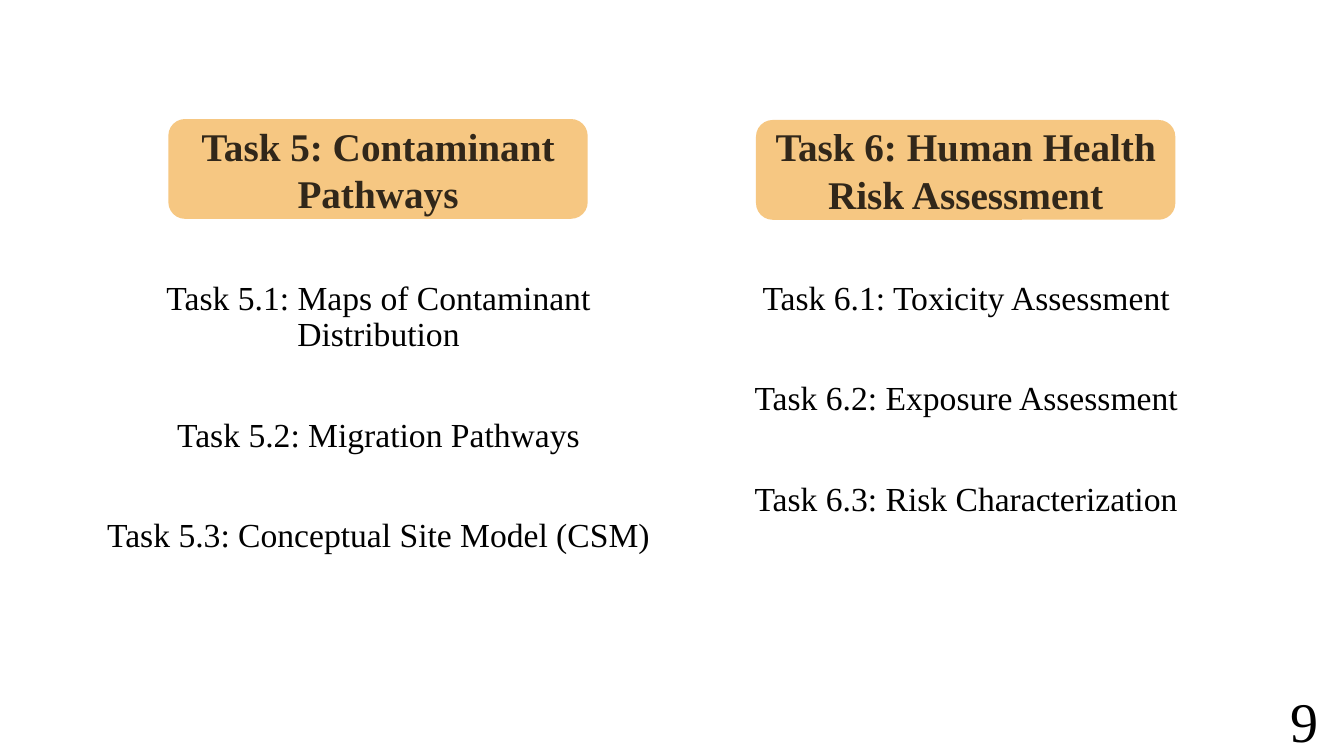
from dataclasses import dataclass

from lxml.etree import SubElement
from pptx import Presentation
from pptx.dml.color import RGBColor
from pptx.enum.shapes import MSO_SHAPE as Shape
from pptx.enum.text import MSO_ANCHOR as Anchor, PP_ALIGN as Align
from pptx.oxml.ns import qn
from pptx.util import Pt


@dataclass(frozen=True)
class Theme:
    """Colours, font and type sizes of the slide."""
    font: str = "Times New Roman"
    ink: RGBColor = RGBColor(0, 0, 0)
    banner: RGBColor = RGBColor(0xF6, 0xC7, 0x82)
    heading_size: int = 28
    task_size: int = 24
    number_size: int = 40


THEME = Theme()
TASK_GROUPS = [
    ("Task 5: Contaminant Pathways", 85, 216.72, [
        "Task 5.1: Maps of Contaminant Distribution",
        "Task 5.2: Migration Pathways",
        "Task 5.3: Conceptual Site Model (CSM)",
    ]),
    ("Task 6: Human Health Risk Assessment", 85.68, 185.76, [
        "Task 6.1: Toxicity Assessment",
        "Task 6.2: Exposure Assessment",
        "Task 6.3: Risk Characterization",
    ]),
]


def write_text(frame, lines, *, size, align=Align.CENTER, anchor=Anchor.TOP,
               bold=False, spacing=1.0, gap=0, opacity=None):
    """Fill a text frame with one formatted paragraph per line."""
    frame.word_wrap = True
    frame.vertical_anchor = anchor
    for index, line in enumerate(lines):
        paragraph = frame.add_paragraph() if index else frame.paragraphs[0]
        paragraph.alignment = align
        paragraph.line_spacing = spacing
        paragraph.space_before = Pt(gap if index else 0)
        run = paragraph.add_run()
        run.text = line
        run.font.name = THEME.font
        run.font.size = Pt(size)
        run.font.bold = bold
        run.font.color.rgb = THEME.ink
        if opacity is not None:
            colour = run.font.fill._xPr.find(".//" + qn("a:srgbClr"))
            SubElement(colour, qn("a:alpha"), val=str(opacity * 1000))


def add_banner(slide, heading, left, top, width, height):
    """Draw the rounded heading of a task group."""
    banner = slide.shapes.add_shape(Shape.ROUNDED_RECTANGLE, Pt(left), Pt(top),
                                    Pt(width), Pt(height))
    banner.shadow.inherit = False
    banner.fill.solid()
    banner.fill.fore_color.rgb = THEME.banner
    banner.line.fill.background()
    write_text(banner.text_frame, [heading], size=THEME.heading_size,
               anchor=Anchor.MIDDLE, bold=True, opacity=80)


def add_task_group(slide, group, left, width):
    """Place a heading and its subtasks in one column."""
    heading, top, list_height, tasks = group
    margin = 54
    add_banner(slide, heading, left + margin, top, width - 2 * margin - 0.7, 71.28)
    task_list = slide.shapes.add_textbox(Pt(left), Pt(197.28), Pt(width), Pt(list_height))
    write_text(task_list.text_frame, tasks, size=THEME.task_size, spacing=0.9, gap=46)


def add_page_number(slide, number, left, top, width, height):
    """Place the page number in its corner."""
    corner = slide.shapes.add_textbox(Pt(left), Pt(top), Pt(width), Pt(height))
    write_text(corner.text_frame, [number], size=THEME.number_size,
               align=Align.RIGHT, anchor=Anchor.MIDDLE)


def main():
    """Build and save the slide."""
    deck = Presentation()
    deck.slide_width, deck.slide_height = Pt(960), Pt(540)
    slide = deck.slides.add_slide(deck.slide_layouts[6])
    for column, group in enumerate(TASK_GROUPS):
        add_task_group(slide, group, 66.24 + column * 419.76, 408.24)
    add_page_number(slide, "9", 894.96, 499.68, 54, 28.8)
    deck.save("out.pptx")


if __name__ == "__main__":
    main()
